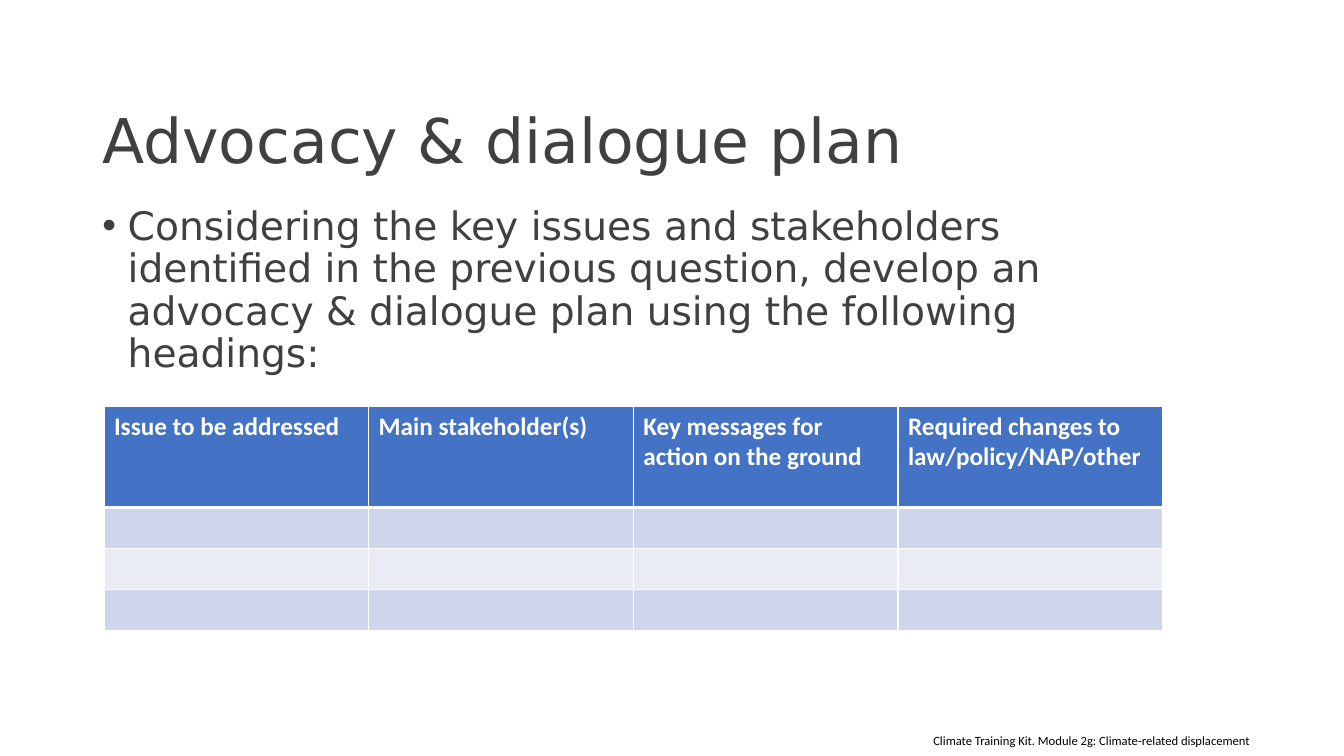
from dataclasses import dataclass

from lxml import etree
from pptx import Presentation
from pptx.dml.color import RGBColor
from pptx.enum.text import MSO_ANCHOR, MSO_AUTO_SIZE
from pptx.oxml.ns import qn
from pptx.util import Cm, Pt

MIDDLE = MSO_ANCHOR.MIDDLE
GROW = MSO_AUTO_SIZE.SHAPE_TO_FIT_TEXT
BLANK_LAYOUT = 6


@dataclass(frozen=True)
class Theme:
    heading_font: str = "DejaVu Sans"
    table_font: str = "Calibri"
    ink: str = "404040"
    black: str = "000000"
    white: str = "FFFFFF"
    header_fill: str = "4472C4"
    odd_fill: str = "CFD5EA"
    even_fill: str = "E9EBF5"
    title_size: int = 44
    body_size: int = 28
    table_size: int = 18
    footer_size: int = 9
    thin_line: int = 1
    thick_line: int = 3


THEME = Theme()
HEADINGS = [
    "Issue to be addressed",
    "Main stakeholder(s)",
    "Key messages for action on the ground",
    "Required changes to law/policy/NAP/other",
]
EMPTY_ROWS = 3
COLUMN_WIDTH = Cm(6.67)
HEADER_HEIGHT = Cm(2.56)
ROW_HEIGHT = Cm(1.03)


def style_font(para, name, size, color, bold=False):
    font = para.font
    font.name, font.size, font.bold = name, Pt(size), bold
    font.color.rgb = RGBColor.from_string(color)


def add_text(page, left, top, width, height, text):
    box = page.shapes.add_textbox(Cm(left), Cm(top), Cm(width), Cm(height))
    box.text_frame.word_wrap = True
    box.text_frame.text = text
    return box.text_frame


def add_bullet(para, indent):
    properties = para._p.get_or_add_pPr()
    properties.set("marL", str(indent))
    properties.set("indent", str(-indent))
    etree.SubElement(properties, qn("a:buFont"), typeface="Arial")
    etree.SubElement(properties, qn("a:buChar"), char="•")


def add_title(page, text):
    frame = add_text(page, 2.33, 2.54, 27.91, 2.16, text)
    frame.vertical_anchor = MIDDLE
    para = frame.paragraphs[0]
    para.line_spacing = 0.9
    style_font(para, THEME.heading_font, THEME.title_size, THEME.ink)


def add_body(page, text):
    para = add_text(page, 2.33, 5.08, 27.91, 11.79, text).paragraphs[0]
    add_bullet(para, Cm(0.64))
    para.line_spacing = 0.9
    style_font(para, THEME.heading_font, THEME.body_size, THEME.ink)


def add_footer(page, text):
    frame = add_text(page, 23.27, 18.34, 8.92, 0.64, text)
    frame.auto_size = GROW
    style_font(frame.paragraphs[0], THEME.table_font, THEME.footer_size, THEME.black)


def add_border(cell, side, width):
    line = etree.SubElement(cell._tc.get_or_add_tcPr(), qn(f"a:ln{side}"), w=str(Pt(width)))
    fill = etree.SubElement(line, qn("a:solidFill"))
    etree.SubElement(fill, qn("a:srgbClr"), val=THEME.white)


def style_cell(cell, row):
    widths = {side: THEME.thin_line for side in "LRTB"}
    if row == 0:
        widths["B"] = THEME.thick_line
        color = THEME.header_fill
    else:
        color = THEME.odd_fill if row % 2 else THEME.even_fill
    if row == 1:
        widths["T"] = THEME.thick_line
    for side, width in widths.items():
        add_border(cell, side, width)
    cell.fill.solid()
    cell.fill.fore_color.rgb = RGBColor.from_string(color)


def add_plan_table(page, headings):
    count = len(headings)
    frame = page.shapes.add_table(
        EMPTY_ROWS + 1, count, Cm(2.62), Cm(10.23),
        COLUMN_WIDTH * count, HEADER_HEIGHT + ROW_HEIGHT * EMPTY_ROWS,
    )
    table = frame.table
    for column in table.columns:
        column.width = COLUMN_WIDTH
    for index, row in enumerate(table.rows):
        row.height = ROW_HEIGHT if index else HEADER_HEIGHT
        for cell in row.cells:
            style_cell(cell, index)
    for cell, heading in zip(table.rows[0].cells, headings):
        cell.text_frame.text = heading
        style_font(cell.text_frame.paragraphs[0], THEME.table_font,
                   THEME.table_size, THEME.white, bold=True)


def main():
    deck = Presentation()
    deck.slide_width, deck.slide_height = Cm(33.87), Cm(19.05)
    page = deck.slides.add_slide(deck.slide_layouts[BLANK_LAYOUT])
    add_footer(page, "Climate Training Kit. Module 2g: Climate-related displacement")
    add_title(page, "Advocacy & dialogue plan")
    add_body(page, "Considering the key issues and stakeholders identified in the previous "
                   "question, develop an advocacy & dialogue plan using the following headings:")
    add_plan_table(page, HEADINGS)
    deck.save("out.pptx")


if __name__ == "__main__":
    main()
